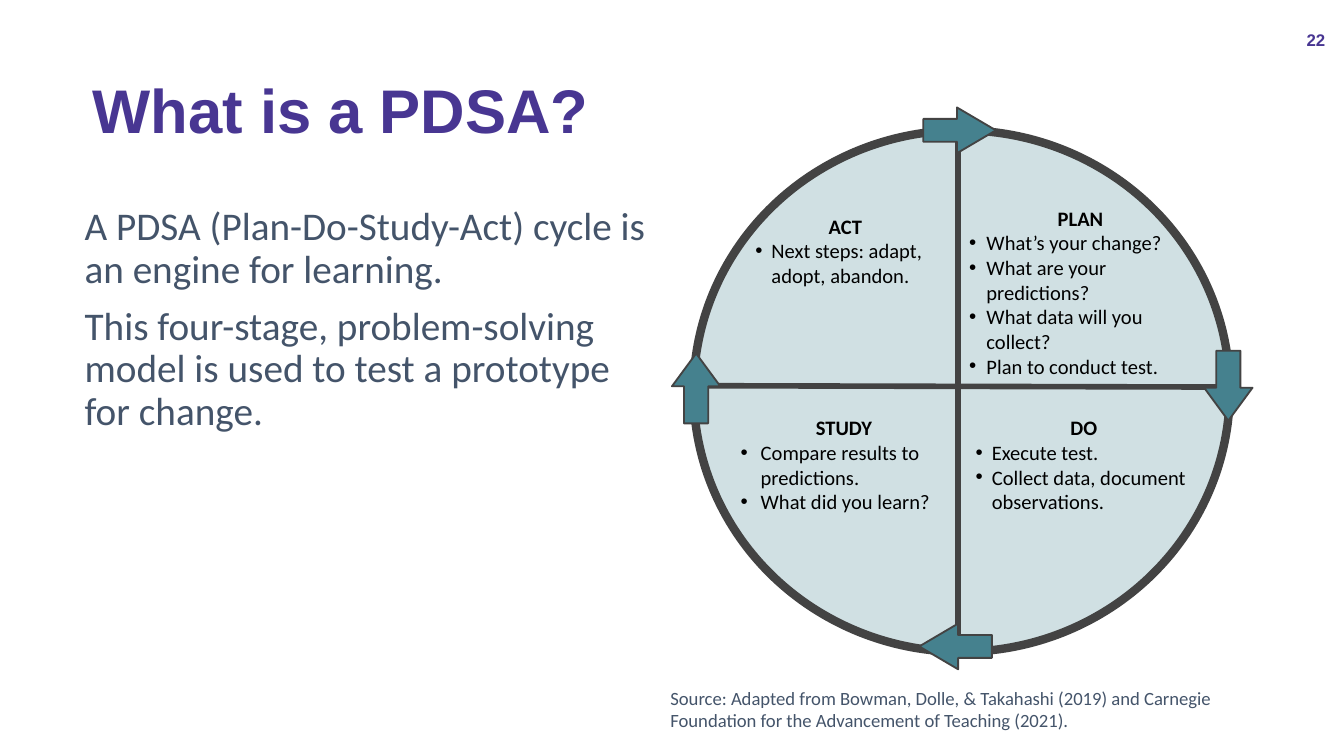
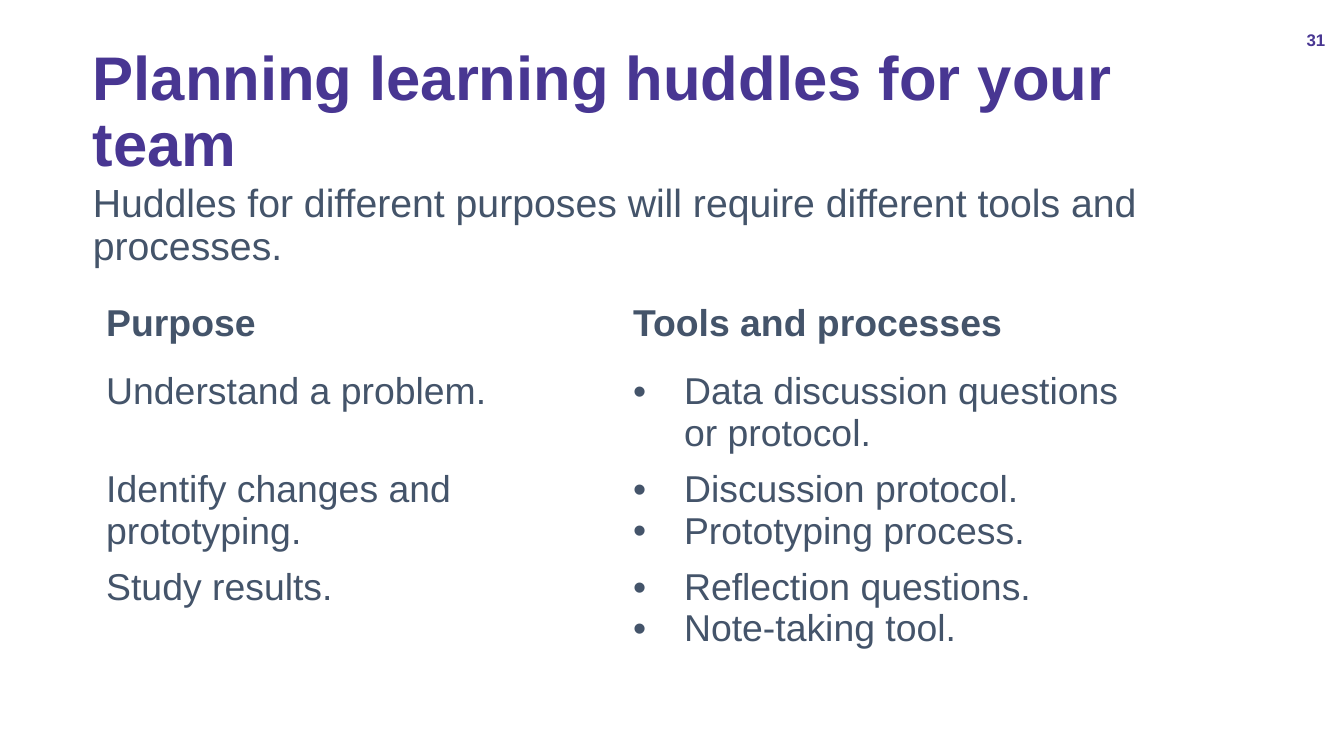
from lxml import etree
from pptx import Presentation
from pptx.dml.color import RGBColor
from pptx.enum.shapes import MSO_CONNECTOR as Connector, MSO_SHAPE as Shape
from pptx.enum.text import MSO_ANCHOR as Anchor, PP_ALIGN as Align
from pptx.oxml.ns import qn
from pptx.util import Inches, Pt

PURPLE = RGBColor(0x48, 0x36, 0x92)
SLATE = RGBColor(0x44, 0x54, 0x6A)
BLACK = RGBColor(0, 0, 0)
CHARCOAL = RGBColor(0x43, 0x43, 0x43)
PALE_TEAL = RGBColor(0xD0, 0xE0, 0xE3)
TEAL = RGBColor(0x45, 0x81, 0x8E)

BODY_INSETS = (0, 0.04, 0.07, 0.04)
LABEL_INSETS = (0.07, 0.04, 0.07, 0.04)
SOURCE_INSETS = (0.1, 0.1, 0.1, 0.1)

PDSA_TEXT = [
    "A PDSA (Plan-Do-Study-Act) cycle is an engine for learning.",
    "This four-stage, problem-solving model is used to test a prototype for change.",
]
SOURCE = ("Source: Adapted from Bowman, Dolle, & Takahashi (2019) and Carnegie "
          "Foundation for the Advancement of Teaching (2021).")
# heading, points, place, left margin and hanging indent of the points
STAGES = [
    ("PLAN", ["What’s your change?", "What are your predictions?",
              "What data will you collect?", "Plan to conduct test."],
     (7.14, 1.49, 1.8, 1.51), 0.13, 0.13),
    ("DO", ["Execute test.", "Collect data, document observations."],
     (7.05, 3.05, 2.03, 1.19), 0.26, 0.12),
    ("STUDY", ["Compare results to predictions.", "What did you learn?"],
     (5.4, 3.05, 1.76, 1.19), 0.19, 0.15),
    ("ACT", ["Next steps: adapt, adopt, abandon."],
     (5.54, 1.55, 1.5, 1.22), 0.13, 0.12),
]
WHEEL = (5.16, 0.97, 3.99, 3.88)
SPOKES = [(7.13, 0.89, 7.13, 4.83), (5.16, 2.87, 9.08, 2.88)]
ARROWS = [
    (Shape.RIGHT_ARROW, (6.87, 0.8, 0.54, 0.34), 0.85),
    (Shape.LEFT_ARROW, (6.84, 4.64, 0.54, 0.34), 0.85),
    (Shape.DOWN_ARROW, (8.96, 2.61, 0.36, 0.52), 0.68),
    (Shape.UP_ARROW, (5, 2.63, 0.36, 0.52), 0.68),
]

HUDDLE_TEXT = ["Huddles for different purposes will require different tools and processes."]
HUDDLE_HEADER = ("Purpose", "Tools and processes")
HUDDLES = [
    ("Understand a problem.", ["Data discussion questions or protocol."]),
    ("Identify changes and prototyping.", ["Discussion protocol.", "Prototyping process."]),
    ("Study results.", ["Reflection questions.", "Note-taking tool."]),
]


def inches(values):
    return [Inches(value) for value in values]


def style(para, size, color, name, bold=False):
    for span in para.runs:
        font = span.font
        font.size, font.name, font.bold = Pt(size), name, bold
        font.color.rgb = color


def add_bullet(para, margin, hanging):
    props = para._p.get_or_add_pPr()
    props.set("marL", str(Inches(margin)))
    props.set("indent", str(-Inches(hanging)))
    etree.SubElement(props, qn("a:buFont")).set("typeface", "Arial")
    etree.SubElement(props, qn("a:buChar")).set("char", "•")


def fill_paragraphs(frame, texts):
    frame.text = "\n".join(texts)
    return frame.paragraphs


def add_text(page, place, texts, size, color, name, insets, bold=False,
             anchor=Anchor.TOP, align=Align.LEFT, line_spacing=None, gap=0):
    frame = page.shapes.add_textbox(*inches(place)).text_frame
    frame.word_wrap = True
    frame.vertical_anchor = anchor
    (frame.margin_left, frame.margin_top,
     frame.margin_right, frame.margin_bottom) = inches(insets)
    for index, para in enumerate(fill_paragraphs(frame, texts)):
        para.alignment = align
        para.line_spacing = line_spacing
        para.space_before = Pt(gap if index else 0)
        style(para, size, color, name, bold)
    return frame


def add_body(page, place, texts, name):
    add_text(page, place, texts, 21, SLATE, name, BODY_INSETS, line_spacing=0.9, gap=8)


def add_page(deck, title, number):
    page = deck.slides.add_slide(deck.slide_layouts[6])
    add_text(page, (0.69, 0.3, 8.62, 1.09), [title], 33, PURPLE, "Arial", BODY_INSETS,
             bold=True, anchor=Anchor.MIDDLE, line_spacing=0.9)
    add_text(page, (9.51, 0.15, 0.42, 0.3), [str(number)], 9, PURPLE, "Arial",
             LABEL_INSETS, bold=True, anchor=Anchor.MIDDLE, align=Align.RIGHT)
    return page


def add_outlined(page, kind, place, fill, width):
    shape = page.shapes.add_shape(kind, *inches(place))
    shape.shadow.inherit = False
    shape.fill.solid()
    shape.fill.fore_color.rgb = fill
    shape.line.color.rgb = CHARCOAL
    shape.line.width = Pt(width)
    return shape


def add_spoke(page, ends):
    spoke = page.shapes.add_connector(Connector.STRAIGHT, *inches(ends))
    spoke.line.color.rgb = CHARCOAL
    spoke.line.width = Pt(3)
    etree.SubElement(spoke._element.spPr, qn("a:effectLst"))


def add_stage(page, heading, points, place, margin, hanging):
    frame = add_text(page, place, [heading, *points], 11, BLACK, "Calibri", LABEL_INSETS)
    first, *rest = frame.paragraphs
    first.alignment = Align.CENTER
    first.runs[0].font.bold = True
    for para in rest:
        add_bullet(para, margin, hanging)


def build_pdsa(deck):
    page = add_page(deck, "What is a PDSA?", 22)
    add_body(page, (0.63, 1.5, 4.27, 3.57), PDSA_TEXT, "Calibri")
    add_text(page, (4.89, 5.01, 4.47, 0.52), [SOURCE], 10, SLATE, "Calibri", SOURCE_INSETS)
    add_outlined(page, Shape.OVAL, WHEEL, PALE_TEAL, 4.5)
    for ends in SPOKES:
        add_spoke(page, ends)
    for kind, place, head in ARROWS:
        arrow = add_outlined(page, kind, place, TEAL, 1)
        arrow.adjustments[0] = 0.5
        arrow.adjustments[1] = head
    for stage in STAGES:
        add_stage(page, *stage)


def fill_cell(cell, texts, bold=False, bulleted=False):
    cell.fill.background()
    cell.margin_top, cell.margin_bottom = inches((0.05, 0.01))
    for para in fill_paragraphs(cell.text_frame, texts):
        if bulleted:
            add_bullet(para, 0.38, 0.38)
        style(para, 20, SLATE, "Arial", bold)


def build_huddles(deck):
    page = add_page(deck, "Planning learning huddles for your team", 31)
    add_body(page, (0.69, 1.33, 8.78, 3.55), HUDDLE_TEXT, "Arial")
    row_count = len(HUDDLES) + 1
    table = page.shapes.add_table(
        row_count, 2, *inches((0.69, 2.2, 7.84, 0.51 * row_count))).table
    table.first_row = table.horz_banding = False
    for column, heading in enumerate(HUDDLE_HEADER):
        fill_cell(table.cell(0, column), [heading], bold=True)
    for row, (purpose, tools) in enumerate(HUDDLES, 1):
        fill_cell(table.cell(row, 0), [purpose])
        fill_cell(table.cell(row, 1), tools, bulleted=True)


def main():
    deck = Presentation()
    deck.slide_width = Inches(10)
    deck.slide_height = deck.slide_width * 9 // 16
    build_pdsa(deck)
    build_huddles(deck)
    deck.save("out.pptx")


if __name__ == "__main__":
    main()
